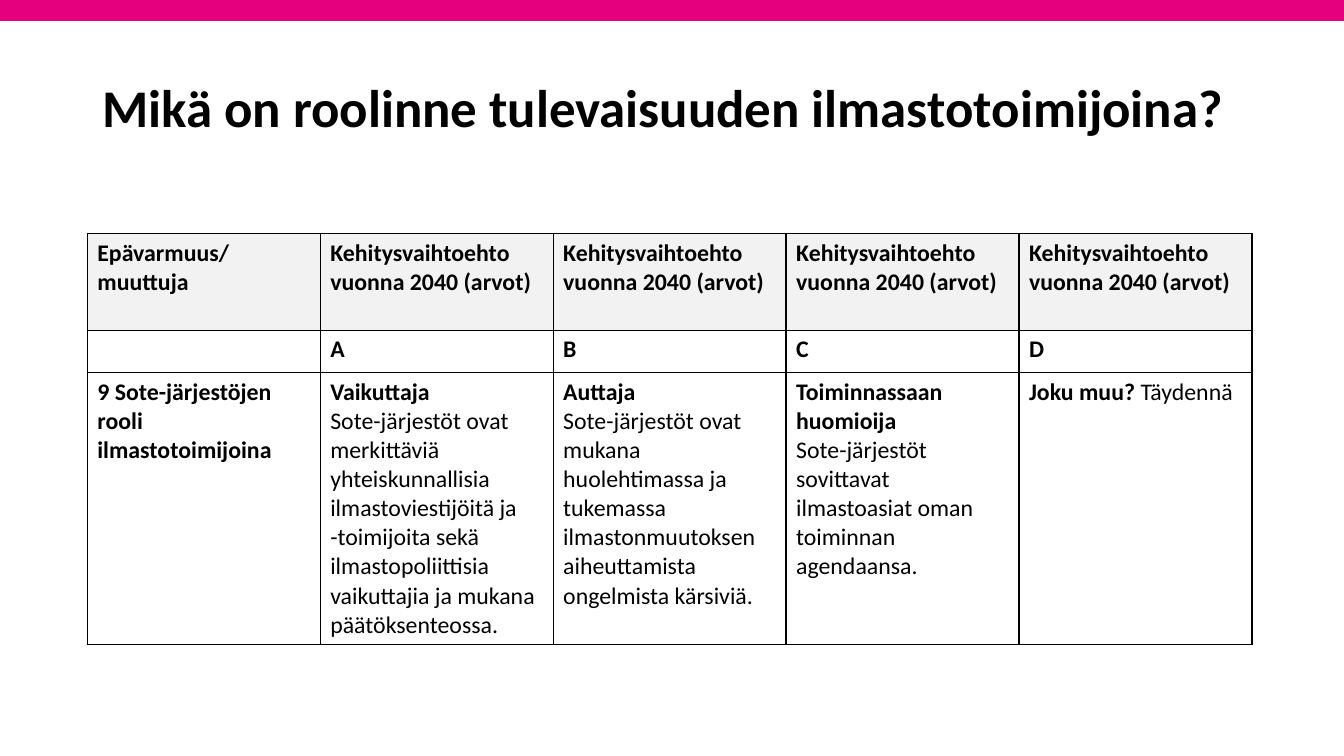
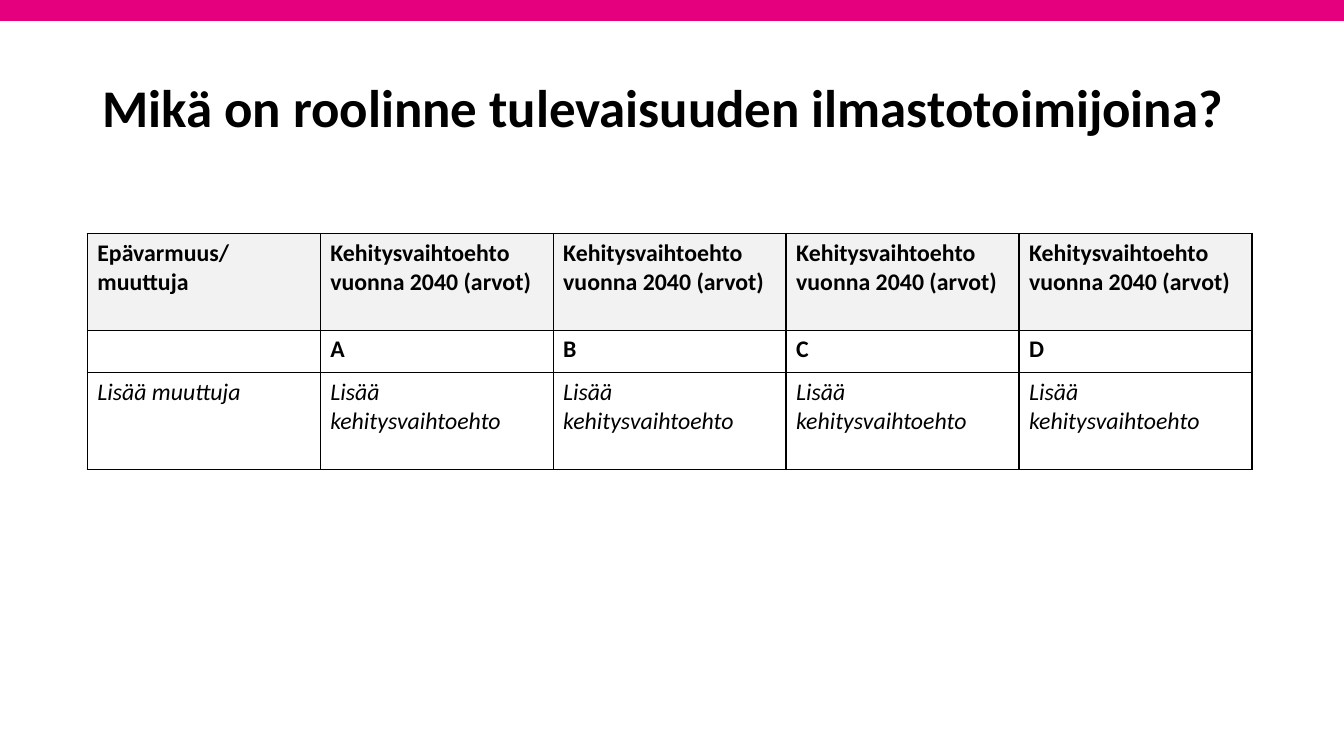
from lxml.etree import SubElement
from pptx import Presentation
from pptx.dml.color import RGBColor
from pptx.enum.shapes import MSO_SHAPE as Shape
from pptx.enum.text import MSO_ANCHOR as Anchor
from pptx.oxml.ns import qn
from pptx.util import Cm, Pt


def color(value):
    return RGBColor.from_string(value)


def add_run(paragraph, text, size, bold=False, italic=False):
    run = paragraph.add_run()
    run.text = text
    run.font.name = "Calibri"
    run.font.size = Pt(size)
    run.font.bold = bold
    run.font.italic = italic
    run.font.color.rgb = color(BLACK)


MAGENTA, BLACK, GREY = "E5007D", "000000", "F2F2F2"
TITLE = "Mikä on roolinne tulevaisuuden ilmastotoimijoina?"
COLUMN_WIDTH = Cm(5.87)
BORDERS = ("a:lnL", "a:lnR", "a:lnT", "a:lnB")

BOLD, PLAIN, ITALIC = (True, False), (False, False), (False, True)
BREAK = "\n"

header_row = [[[("Epävarmuus/", BOLD)], [("muuttuja", BOLD)]]]
header_row += [[[("Kehitysvaihtoehto vuonna 2040 (arvot)", BOLD)]]] * 4
letter_row = [[]] + [[[(letter, BOLD)]] for letter in "ABCD"]

role_row = [
    [[("9 Sote-järjestöjen rooli ilmastotoimijoina", BOLD)]],
    [[("Vaikuttaja", BOLD), (BREAK, BOLD),
      ("Sote-järjestöt ovat merkittäviä yhteiskunnallisia ilmastoviestijöitä ja "
       "-toimijoita sekä ilmastopoliittisia vaikuttajia ja mukana "
       "päätöksenteossa.", PLAIN)]],
    [[("Auttaja", BOLD), (BREAK, BOLD),
      ("Sote-järjestöt ovat mukana huolehtimassa ja tukemassa "
       "ilmastonmuutoksen aiheuttamista ongelmista kärsiviä.", PLAIN)]],
    [[("Toiminnassaan huomioija", BOLD), (BREAK, BOLD),
      ("Sote-järjestöt sovittavat ilmastoasiat oman toiminnan agendaansa.", PLAIN)]],
    [[("Joku muu? ", BOLD), ("Täydennä", PLAIN)]],
]
blank_row = [[[("Lisää muuttuja", ITALIC)]]]
blank_row += [[[("Lisää kehitysvaihtoehto", ITALIC)]]] * 4

prs = Presentation()
prs.slide_width = Cm(33.87)
prs.slide_height = Cm(19.05)

for variable_row, variable_height in ((role_row, 6.85), (blank_row, 2.44)):
    slide = prs.slides.add_slide(prs.slide_layouts[6])

    band = slide.shapes.add_shape(
        Shape.RECTANGLE, 0, Cm(-0.13), prs.slide_width, Cm(0.66))
    band.shadow.inherit = False
    band.fill.solid()
    band.fill.fore_color.rgb = color(MAGENTA)
    band.line.fill.background()

    title = slide.shapes.add_textbox(Cm(2.33), Cm(1.45), Cm(29.21), Cm(2.67)).text_frame
    title.word_wrap = True
    title.vertical_anchor = Anchor.MIDDLE
    title.paragraphs[0].line_spacing = 0.9
    add_run(title.paragraphs[0], TITLE, 37.8, bold=True)

    rows = [header_row, letter_row, variable_row]
    heights = [Cm(2.44), Cm(1.07), Cm(variable_height)]
    options = slide.shapes.add_table(
        len(rows), len(header_row), Cm(2.2), Cm(5.88),
        COLUMN_WIDTH * len(header_row), sum(heights)).table
    options.first_row = False
    options.horz_banding = False
    for column in options.columns:
        column.width = COLUMN_WIDTH

    for r, (row, height) in enumerate(zip(rows, heights)):
        options.rows[r].height = height
        for c, paragraphs in enumerate(row):
            cell = options.cell(r, c)
            properties = cell._tc.get_or_add_tcPr()
            for border in BORDERS:
                edge = SubElement(properties, qn(border), w=str(Pt(1)))
                solid = SubElement(edge, qn("a:solidFill"))
                SubElement(solid, qn("a:srgbClr"), val=BLACK)
            if r == 0:
                cell.fill.solid()
                cell.fill.fore_color.rgb = color(GREY)
            else:
                cell.fill.background()

            frame = cell.text_frame
            for p, runs in enumerate(paragraphs):
                paragraph = frame.add_paragraph() if p else frame.paragraphs[0]
                for text, (bold, italic) in runs:
                    if text == BREAK:
                        paragraph.add_line_break()
                    else:
                        add_run(paragraph, text, 17, bold, italic)

prs.save("out.pptx")
